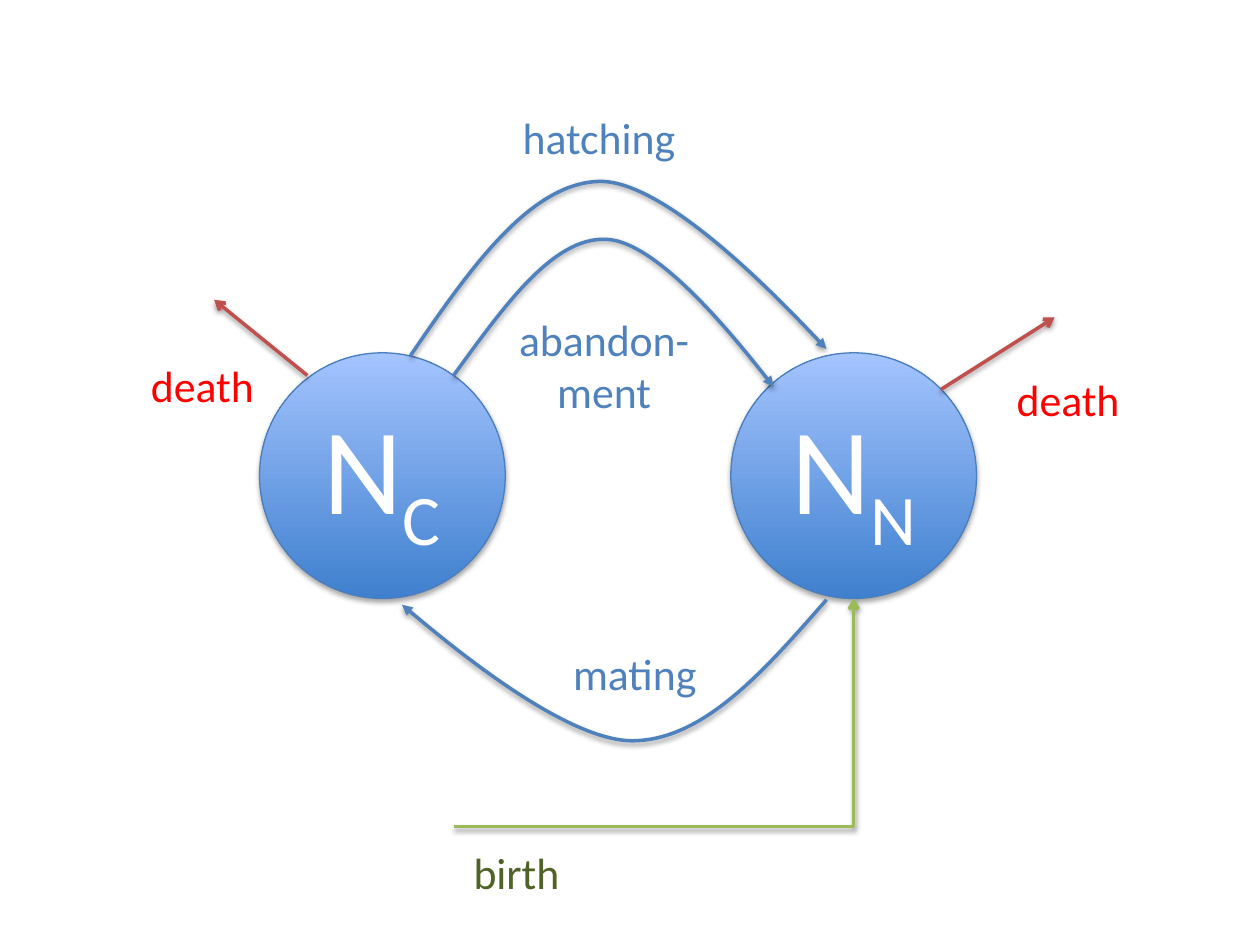
import pptx
import pptx.util
import pptx.dml.color
import pptx.enum.dml
import pptx.enum.shapes
import pptx.enum.text
import pptx.oxml.ns
import lxml.etree

COLUMNS, ROWS = 100, 75
WIDTH, HEIGHT = pptx.util.Inches(10), pptx.util.Inches(7.5)
FONT = "Calibri"
COLORS = {
    "flow": "4F81BD",
    "birth arrow": "9BBB59",
    "birth label": "4F6228",
    "death arrow": "C0504D",
    "death label": "FF0000",
    "circle bottom": "3F80CE",
    "circle top": "A4C4FF",
    "circle outline": "4B7EBC",
    "symbol": "FFFFFF",
    "shadow": "000000",
}
DIAMETER = 19.5
CIRCLE_TOP = 28
CIRCLES = [(20.6, "C"), (58, "N")]
CURVES = [
    [(36, 29.8), (40, 24.3), (43.9, 18.8), (48.1, 19), (52.4, 19.1), (61.4, 30.7), (61.4, 30.7)],
    [(32.6, 28.2), (37.3, 21.3), (42.1, 14.5), (47.6, 14.4), (53.1, 14.3), (65.6, 27.7), (65.6, 27.7)],
    [(65.6, 47.6), (60.7, 53.2), (55.9, 58.7), (50.3, 58.8), (44.7, 58.9), (31.9, 48), (31.9, 48)],
]
DEATHS = [((74.7, 30.9), (83.7, 25.2)), ((24.4, 29.8), (17, 23.8))]
LABELS = [
    (["death"], "death label", 79.7, 29.1, 10.3),
    (["death"], "death label", 11, 28, 10.3),
    (["birth"], "birth label", 36.6, 66.6, 8.9),
    (["mating"], "flow", 44.5, 50.8, 11.9),
    (["abandon-", "ment"], "flow", 40.1, 24.3, 15.7),
    (["hatching"], "flow", 40.5, 8.3, 14.3),
]


def across(columns):
    """Return the length of a number of grid columns."""
    return round(WIDTH * columns / COLUMNS)


def down(rows):
    """Return the length of a number of grid rows."""
    return round(HEIGHT * rows / ROWS)


def color(name):
    """Return a named colour."""
    return pptx.dml.color.RGBColor.from_string(COLORS[name])


def add_child(parent, tag, **attributes):
    """Append a drawing element with its attributes."""
    return lxml.etree.SubElement(parent, pptx.oxml.ns.qn(tag), attributes)


def add_shadow(shape, opacity, distance):
    """Give a shape a soft shadow that falls straight down."""
    properties = shape._element.spPr
    for old in properties.findall(pptx.oxml.ns.qn("a:effectLst")):
        properties.remove(old)
    effects = add_child(properties, "a:effectLst")
    shadow = add_child(effects, "a:outerShdw", blurRad="40000", dist=str(distance),
                       dir="5400000", rotWithShape="0")
    tint = add_child(shadow, "a:srgbClr", val=COLORS["shadow"])
    add_child(tint, "a:alpha", val=str(opacity * 1000))


def style_arrow(shape, color_name, head):
    """Style an open line as a shadowed arrow."""
    shape.line.color.rgb = color(color_name)
    shape.line.width = pptx.util.Pt(2)
    add_child(shape.line._get_or_add_ln(), "a:tailEnd", type=head)
    add_shadow(shape, 38, 20000)


def add_run(paragraph, text, size, color_name):
    """Add one run of text and return it."""
    run = paragraph.add_run()
    run.text = text
    run.font.name = FONT
    run.font.size = pptx.util.Pt(size)
    run.font.color.rgb = color(color_name)
    return run


def add_circle(slide, left, subscript):
    """Add a population circle with its symbol."""
    circle = slide.shapes.add_shape(
        pptx.enum.shapes.MSO_SHAPE.OVAL,
        across(left), down(CIRCLE_TOP), across(DIAMETER), down(DIAMETER))
    circle.fill.gradient()
    circle.fill.gradient_angle = 90
    for stop, position, name in zip(circle.fill.gradient_stops, (0, 1),
                                    ("circle bottom", "circle top")):
        stop.position = position
        stop.color.rgb = color(name)
    circle.line.color.rgb = color("circle outline")
    circle.line.width = pptx.util.Pt(0.75)
    add_shadow(circle, 35, 23000)
    circle.text_frame.vertical_anchor = pptx.enum.text.MSO_ANCHOR.MIDDLE
    paragraph = circle.text_frame.paragraphs[0]
    paragraph.alignment = pptx.enum.text.PP_ALIGN.CENTER
    add_run(paragraph, "N", 70, "symbol")
    run = add_run(paragraph, subscript, 70, "symbol")
    run.font._element.set("baseline", "-25000")


def add_curve(slide, points):
    """Add a curved arrow through a chain of Bezier control points."""
    places = [(across(column), down(row)) for column, row in points]
    builder = slide.shapes.build_freeform(*places[0])
    builder.add_line_segments(places[1:], close=False)
    curve = builder.convert_to_shape()
    outline = curve._element.spPr.find(".//" + pptx.oxml.ns.qn("a:path"))
    segments = outline.findall(pptx.oxml.ns.qn("a:lnTo"))
    for start in range(0, len(segments), 3):
        bezier = add_child(outline, "a:cubicBezTo")
        for segment in segments[start:start + 3]:
            bezier.append(segment[0])
            outline.remove(segment)
    curve.fill.background()
    style_arrow(curve, "flow", "triangle")


def add_arrow(slide, kind, start, end, color_name):
    """Add a connector arrow between two grid points."""
    connector = slide.shapes.add_connector(
        kind, across(start[0]), down(start[1]), across(end[0]), down(end[1]))
    style_arrow(connector, color_name, "arrow")
    return connector


def add_label(slide, lines, color_name, left, top, width):
    """Add a label with one paragraph for each line."""
    height = 1 + 4.2 * len(lines)
    box = slide.shapes.add_textbox(across(left), down(top), across(width), down(height))
    frame = box.text_frame
    frame.word_wrap = False
    frame.auto_size = pptx.enum.text.MSO_AUTO_SIZE.SHAPE_TO_FIT_TEXT
    for index, line in enumerate(lines):
        paragraph = frame.add_paragraph() if index else frame.paragraphs[0]
        if len(lines) > 1:
            paragraph.alignment = pptx.enum.text.PP_ALIGN.CENTER
        add_run(paragraph, line, 25, color_name)


def main():
    """Build the population flow slide."""
    presentation = pptx.Presentation()
    presentation.slide_width, presentation.slide_height = WIDTH, HEIGHT
    slide = presentation.slides.add_slide(presentation.slide_layouts[6])
    for left, subscript in CIRCLES:
        add_circle(slide, left, subscript)
    for points in CURVES:
        add_curve(slide, points)
    kinds = pptx.enum.shapes.MSO_CONNECTOR
    birth_end = (CIRCLES[1][0] + DIAMETER / 2, CIRCLE_TOP + DIAMETER)
    birth = add_arrow(slide, kinds.ELBOW, (36, 65.6), birth_end, "birth arrow")
    birth._element.spPr.find(pptx.oxml.ns.qn("a:prstGeom")).set("prst", "bentConnector2")
    for start, end in DEATHS:
        add_arrow(slide, kinds.STRAIGHT, start, end, "death arrow")
    for label in LABELS:
        add_label(slide, *label)
    presentation.save("out.pptx")


if __name__ == "__main__":
    main()
